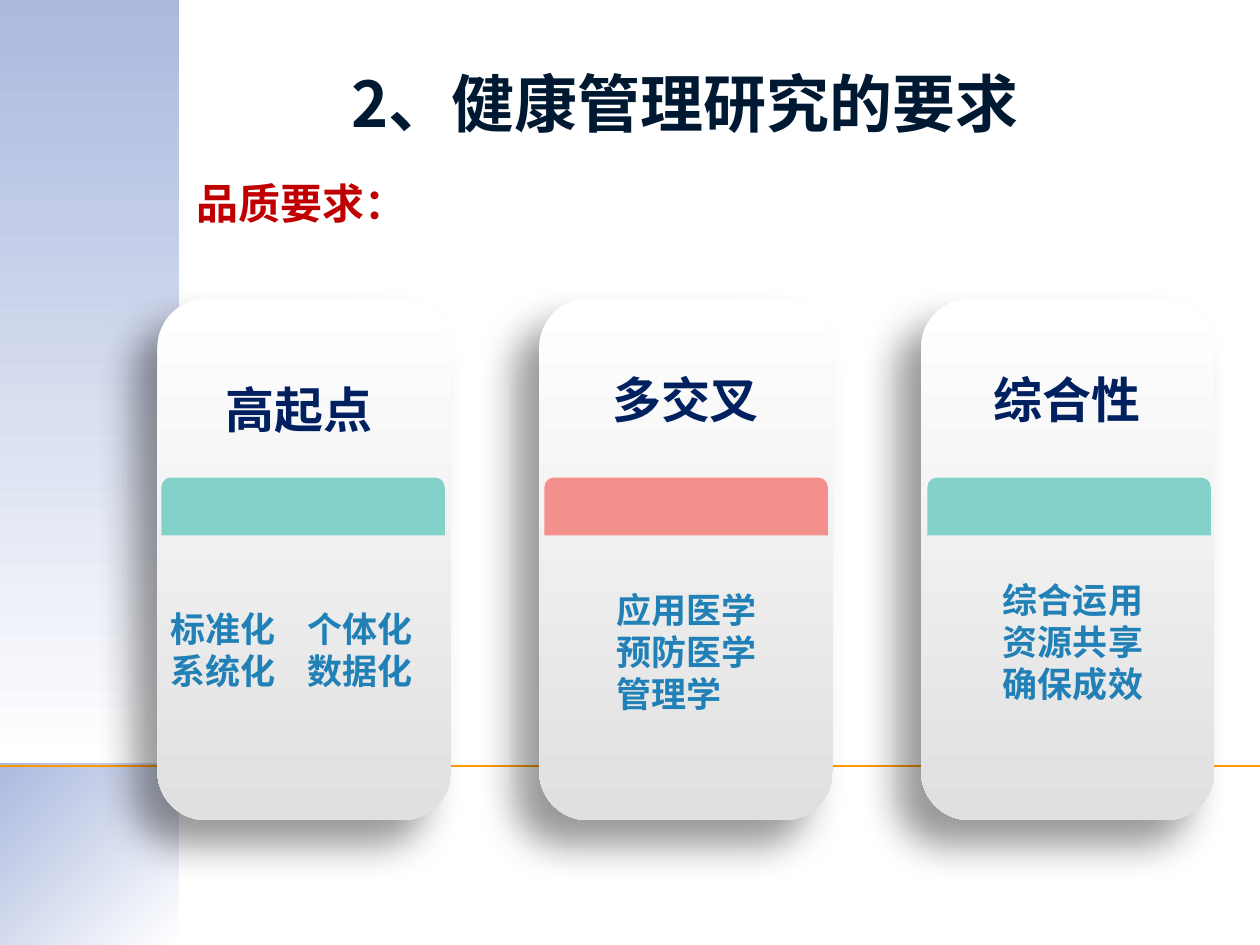
from lxml import etree
from pptx import Presentation
from pptx import util as u
from pptx.dml.color import RGBColor
from pptx.enum import shapes, text
from pptx.oxml import ns

COLS, ROWS = 100, 75
WIDTH, HEIGHT = u.Inches(10), u.Inches(7.5)
SANS, SERIF = "Noto Sans CJK SC", "Times New Roman"

WHITE = RGBColor(0xFF, 0xFF, 0xFF)
SILVER = RGBColor(0xE0, 0xE0, 0xE0)
PERIWINKLE = RGBColor(0xAB, 0xB9, 0xDF)
ORANGE = RGBColor(0xFF, 0x99, 0x00)
TEAL = RGBColor(0x84, 0xD1, 0xC9)
CORAL = RGBColor(0xF3, 0x90, 0x8C)
INK = RGBColor(0x00, 0x19, 0x32)
RED = RGBColor(0xC0, 0x00, 0x00)
NAVY = RGBColor(0x00, 0x20, 0x60)
BLUE = RGBColor(0x21, 0x81, 0xB7)

TITLE = {"size": u.Pt(36), "name": SANS, "bold": True}
SUBTITLE = {"size": u.Pt(24), "name": SANS, "bold": True}
HEADING = {"size": u.Pt(28), "name": SANS, "bold": True}
BODY = {"size": u.Pt(20), "name": SERIF, "bold": True}

CARDS = [
    (TEAL, "高起点", (16.9, 29.6, 13.9, 5.7),
     ["标准化\t个体化", "系统化\t数据化"], (7.5, 47.7, 27.5, 7.7)),
    (CORAL, "多交叉", (47.6, 28.8, 13.8, 5.7),
     ["应用医学", "预防医学", "管理学"], (42.9, 46.2, 18.4, 11.1)),
    (TEAL, "综合性", (77.9, 28.8, 13.8, 5.7),
     ["综合运用", "资源共享", "确保成效"], (73.6, 45.4, 18.4, 11.1)),
]


def place(col, row, cols, rows):
    """Turn grid columns and rows into slide lengths."""
    return (int(WIDTH * col / COLS), int(HEIGHT * row / ROWS),
            int(WIDTH * cols / COLS), int(HEIGHT * rows / ROWS))


def add_block(s, kind, cell, *colors, angle=90):
    """Add a borderless shape with a solid or a clockwise gradient fill."""
    sp = s.shapes.add_shape(kind, *place(*cell))
    sp.shadow.inherit = False
    sp.line.fill.background()
    if len(colors) == 1:
        sp.fill.solid()
        sp.fill.fore_color.rgb = colors[0]
    else:
        sp.fill.gradient()
        sp.fill.gradient_angle = 360 - angle
        for stop, color in zip(sp.fill.gradient_stops, colors):
            stop.color.rgb = color
    return sp


def add_shadow(sp):
    """Cast a soft shadow down and to the left."""
    effects = sp._element.spPr.find(ns.qn("a:effectLst"))
    shadow = etree.SubElement(effects, ns.qn("a:outerShdw"), blurRad=str(u.Pt(22)),
                              dist=str(u.Pt(20)), dir=str(135 * 60000),
                              algn="tr", rotWithShape="0")
    color = etree.SubElement(shadow, ns.qn("a:srgbClr"), val="000000")
    etree.SubElement(color, ns.qn("a:alpha"), val="40000")


def add_rule(s, row):
    """Draw a thin horizontal line across the whole slide."""
    left, top, width, _ = place(0, row, COLS, 0)
    cn = s.shapes.add_connector(shapes.MSO_CONNECTOR.STRAIGHT, left, top, left + width, top)
    cn.line.color.rgb = ORANGE
    cn.line.width = u.Pt(0.75)
    etree.SubElement(cn._element.spPr, ns.qn("a:effectLst"))


def add_tab(p, position):
    """Set one left tab stop on a paragraph."""
    tabs = etree.SubElement(p._p.get_or_add_pPr(), ns.qn("a:tabLst"))
    etree.SubElement(tabs, ns.qn("a:tab"), pos=str(position), algn="l")


def add_text(s, cell, lines, fmt, color, align=text.PP_ALIGN.LEFT, wrap=False, inset=0.1):
    """Add a text box with one paragraph for each line."""
    tf = s.shapes.add_textbox(*place(*cell)).text_frame
    tf.word_wrap = wrap
    tf.margin_left = u.Inches(inset)
    for i, line in enumerate(lines):
        p = tf.add_paragraph() if i else tf.paragraphs[0]
        p.alignment = align
        if "\t" in line:
            add_tab(p, u.Inches(1.09))
        r = p.add_run()
        r.text = line
        for key, value in fmt.items():
            setattr(r.font, key, value)
        r.font.color.rgb = color
        etree.SubElement(r._r.get_or_add_rPr(), ns.qn("a:ea"), typeface=SANS)


def add_card(s, i, band, heading, heading_cell, lines, lines_cell):
    """Add one card with its coloured band, heading and text."""
    kind = shapes.MSO_SHAPE
    card = add_block(s, kind.ROUNDED_RECTANGLE, (12.5 + 30.3 * i, 23.7, 23.3, 41.4),
                     WHITE, SILVER)
    add_shadow(card)
    add_block(s, kind.ROUND_2_SAME_RECTANGLE, (12.8 + 30.4 * i, 37.9, 22.5, 4.6), band)
    add_text(s, heading_cell, [heading], HEADING, NAVY)
    add_text(s, lines_cell, lines, BODY, BLUE, wrap=True, inset=0.6)


def main():
    """Build the slide and save it."""
    prs = Presentation()
    prs.slide_width, prs.slide_height = WIDTH, HEIGHT
    s = prs.slides.add_slide(prs.slide_layouts[6])
    rect = shapes.MSO_SHAPE.RECTANGLE
    add_block(s, rect, (0, 0, 14.2, 60.6), PERIWINKLE, WHITE)
    add_block(s, rect, (0, 60.6, 14.2, 14.4), PERIWINKLE, WHITE, angle=45)
    add_rule(s, 60.8)
    for i, card in enumerate(CARDS):
        add_card(s, i, *card)
    add_text(s, (13.8, 4.6, 81.1, 7.7), ["2、健康管理研究的要求"], TITLE, INK,
             align=text.PP_ALIGN.CENTER, wrap=True)
    add_text(s, (14.6, 13.6, 18.7, 5), ["品质要求："], SUBTITLE, RED)
    prs.save("out.pptx")


if __name__ == "__main__":
    main()
